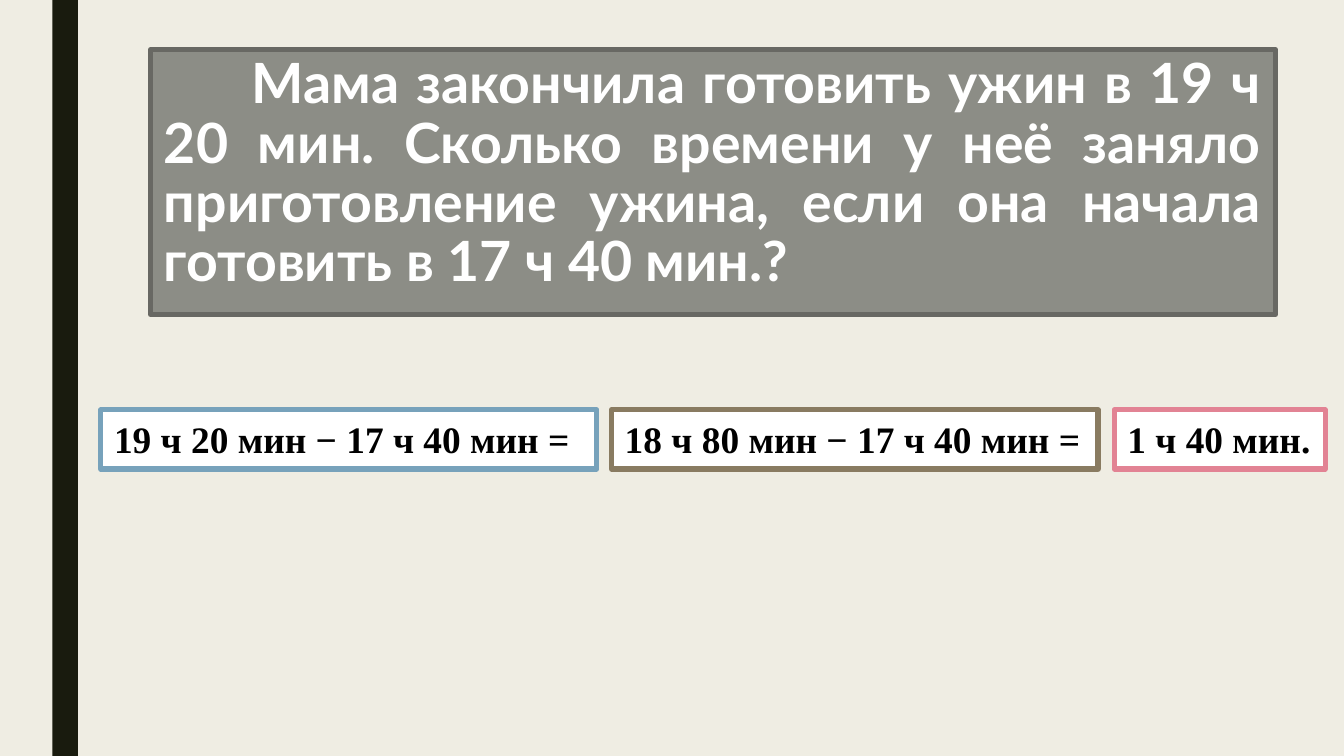
from pptx import Presentation
from pptx.dml.color import RGBColor
from pptx.enum.shapes import MSO_SHAPE
from pptx.enum.text import MSO_ANCHOR, MSO_AUTO_SIZE, PP_ALIGN
from pptx.util import Inches, Pt

WIDTH = 10
HEIGHT = WIDTH * 9 / 16
COLORS = {
    "page": "EFEDE3", "bar": "191B0E", "panel": "8C8D86", "edge": "686863",
    "white": "FFFFFF", "black": "000000",
    "blue": "77A2BB", "brown": "897B61", "pink": "E28394",
}
TASK = ("Мама закончила готовить ужин в 19 ч 20 мин. Сколько времени у неё заняло "
        "приготовление ужина, если она начала готовить в 17 ч 40 мин.?")
STEPS = [
    ("19 ч 20 мин − 17 ч 40 мин =", 0.75, 3.69, "blue"),
    ("18 ч 80 мин − 17 ч 40 мин =", 4.55, 3.62, "brown"),
    ("1 ч 40 мин.", 8.29, 1.57, "pink"),
]
FRAME = {
    "word_wrap": True, "auto_size": MSO_AUTO_SIZE.NONE,
    "vertical_anchor": MSO_ANCHOR.TOP, "margin_right": Inches(0.05),
}
TASK_FONT = {"name": "Lato", "size": Pt(29.7), "bold": True}
STEP_FONT = {"name": "Times New Roman", "size": Pt(20), "bold": True}


def color(name):
    return RGBColor.from_string(COLORS[name])


def apply(item, values):
    for key, value in values.items():
        setattr(item, key, value)


def paint(shape, fill, edge=None):
    shape.fill.solid()
    shape.fill.fore_color.rgb = color(fill)
    if edge:
        shape.line.color.rgb = color(edge)
        shape.line.width = Pt(2.75)
    else:
        shape.line.fill.background()


def write(shape, text, font, ink, align):
    """Fill the shape with one paragraph and return it."""
    frame = shape.text_frame
    apply(frame, FRAME)
    para = frame.paragraphs[0]
    para.alignment = align
    run = para.add_run()
    run.text = text
    apply(run.font, font)
    run.font.color.rgb = color(ink)
    return para


def add_box(slide, left, top, width, height, fill, edge=None):
    box = slide.shapes.add_shape(
        MSO_SHAPE.RECTANGLE, Inches(left), Inches(top), Inches(width), Inches(height))
    box.shadow.inherit = False
    paint(box, fill, edge)
    return box


def set_task(slide):
    title = slide.shapes.title
    apply(title, {"left": Inches(1.12), "top": Inches(0.37),
                  "width": Inches(8.37), "height": Inches(1.97)})
    paint(title, "panel", "edge")
    para = write(title, TASK, TASK_FONT, "white", PP_ALIGN.JUSTIFY)
    title.text_frame.margin_right = Inches(0.1)
    para.line_spacing = 0.89
    para._p.get_or_add_pPr().set("indent", str(Inches(0.65)))


def add_step(slide, text, left, width, edge):
    box = add_box(slide, left, 3.05, width, 0.44, "white", edge)
    write(box, text, STEP_FONT, "black", PP_ALIGN.LEFT)


def main():
    deck = Presentation()
    apply(deck, {"slide_width": Inches(WIDTH), "slide_height": Inches(HEIGHT)})
    slide = deck.slides.add_slide(deck.slide_layouts[5])
    slide.background.fill.solid()
    slide.background.fill.fore_color.rgb = color("page")
    add_box(slide, 0.39, 0, 0.19, HEIGHT, "bar")
    set_task(slide)
    for step in STEPS:
        add_step(slide, *step)
    deck.save("out.pptx")


if __name__ == "__main__":
    main()
